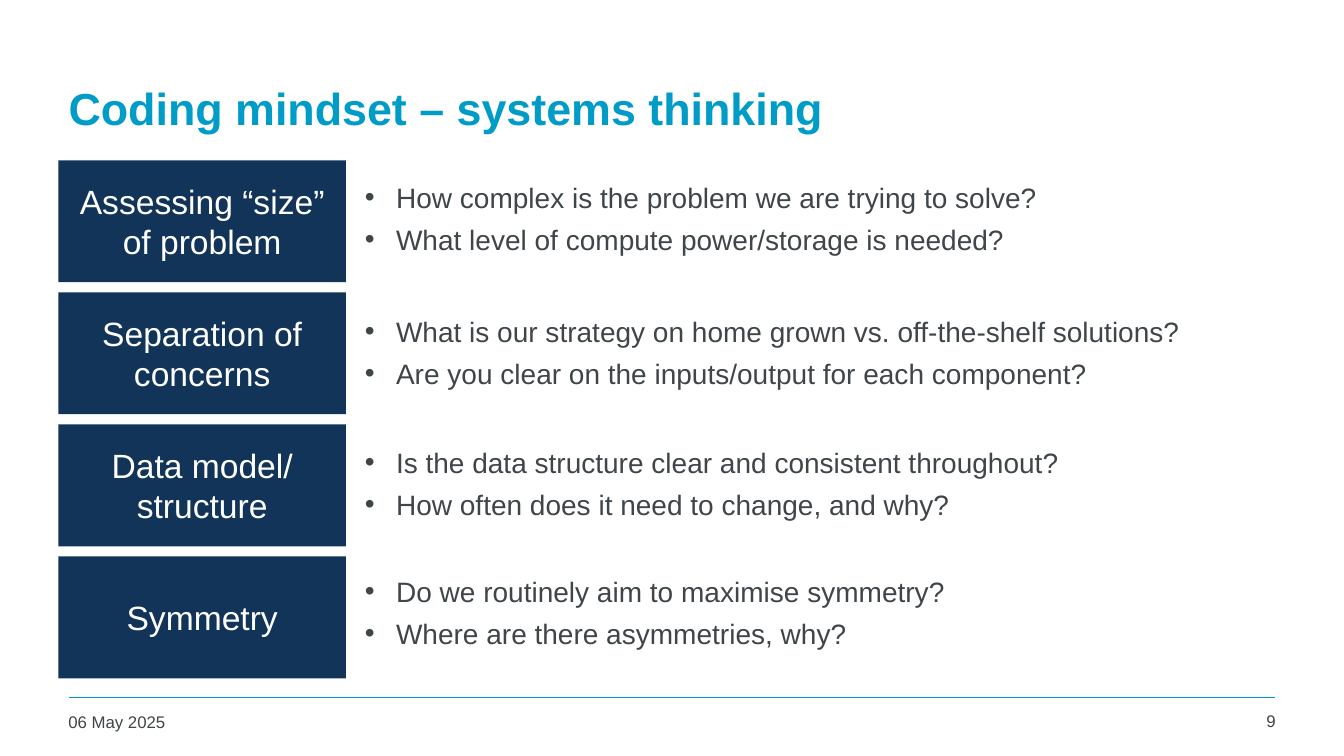
from dataclasses import dataclass
from lxml import etree
from pptx import Presentation
from pptx.dml.color import RGBColor
from pptx.enum import shapes, text
from pptx.oxml import ns
from pptx.util import Inches, Pt

TITLE = "Coding mindset – systems thinking"
DATE = "06 May 2025"
NUMBER = "9"
TOPICS = [
    ("Assessing “size” of problem", 1.74, [
        "How complex is the problem we are trying to solve?",
        "What level of compute power/storage is needed?"]),
    ("Separation of concerns", 3.07, [
        "What is our strategy on home grown vs. off-the-shelf solutions?",
        "Are you clear on the inputs/output for each component?"]),
    ("Data model/\nstructure", 4.37, [
        "Is the data structure clear and consistent throughout?",
        "How often does it need to change, and why?"]),
    ("Symmetry", 5.65, [
        "Do we routinely aim to maximise symmetry?",
        "Where are there asymmetries, why?"]),
]


@dataclass(frozen=True)
class Theme:
    font: str = "Arial"
    accent: str = "009CC8"
    navy: str = "113458"
    ink: str = "3F4548"
    white: str = "FFFFFF"
    title: int = 32
    card: int = 24
    body: int = 20
    foot: int = 12


THEME = Theme()
LEFT, TOP, WIDTH, HEIGHT, PITCH = 0.58, 1.59, 2.85, 1.21, 1.31
ALIGN = text.PP_ALIGN


def box(*sides):
    return [Inches(side) for side in sides]


def style(para, size, color, align=ALIGN.LEFT, bold=False):
    para.alignment = align
    for run in para.runs:
        font = run.font
        font.name, font.size, font.bold = THEME.font, Pt(size), bold
        font.color.rgb = RGBColor.from_string(color)


def bullet(para):
    props = para._p.get_or_add_pPr()
    props.set("marL", str(Inches(0.31)))
    props.set("indent", str(-Inches(0.31)))
    etree.SubElement(props, ns.qn("a:buFont")).set("typeface", THEME.font)
    etree.SubElement(props, ns.qn("a:buChar")).set("char", "•")
    para.space_after = Pt(6)


def add_title(slide):
    title = slide.shapes.title
    title.left, title.top, title.width, title.height = box(0.58, 0.44, 12.09, 1.25)
    frame = title.text_frame
    frame.text = TITLE
    frame.vertical_anchor = text.MSO_ANCHOR.MIDDLE
    style(frame.paragraphs[0], THEME.title, THEME.accent, bold=True)


def add_card(slide, label, top):
    card = slide.shapes.add_shape(
        shapes.MSO_SHAPE.RECTANGLE, *box(LEFT, top, WIDTH, HEIGHT))
    card.shadow.inherit = False
    card.fill.solid()
    card.fill.fore_color.rgb = RGBColor.from_string(THEME.navy)
    card.line.fill.background()
    frame = card.text_frame
    frame.word_wrap = True
    frame.vertical_anchor = text.MSO_ANCHOR.MIDDLE
    para = frame.paragraphs[0]
    para.text = label.replace("\n", "\v")
    style(para, THEME.card, THEME.white, ALIGN.CENTER)


def add_points(slide, points, top):
    frame = slide.shapes.add_textbox(*box(3.52, top, 9.24, 0.86)).text_frame
    frame.word_wrap = True
    frame.auto_size = text.MSO_AUTO_SIZE.SHAPE_TO_FIT_TEXT
    frame.text = "\n".join(points)
    for para in frame.paragraphs:
        bullet(para)
        style(para, THEME.body, THEME.ink)


def add_footer(slide):
    rule = slide.shapes.add_connector(
        shapes.MSO_CONNECTOR.STRAIGHT, *box(0.68, 6.92, 12.65, 6.92))
    rule.line.color.rgb = RGBColor.from_string(THEME.accent)
    rule.line.width = Pt(1)
    etree.SubElement(rule._element.spPr, ns.qn("a:effectLst"))
    notes = [
        (DATE, (0.58, 7.01, 2.94, 0.36), ALIGN.LEFT),
        (NUMBER, (11.81, 7, 0.94, 0.37), ALIGN.RIGHT),
    ]
    for words, place, align in notes:
        frame = slide.shapes.add_textbox(*box(*place)).text_frame
        frame.word_wrap = True
        frame.text = words
        style(frame.paragraphs[0], THEME.foot, THEME.ink, align)


def main():
    deck = Presentation()
    deck.slide_width, deck.slide_height = box(13.33, 7.5)
    slide = deck.slides.add_slide(deck.slide_layouts[5])
    add_title(slide)
    for row, (label, top, points) in enumerate(TOPICS):
        add_card(slide, label, TOP + row * PITCH)
        add_points(slide, points, top)
    add_footer(slide)
    deck.save("out.pptx")


if __name__ == "__main__":
    main()
